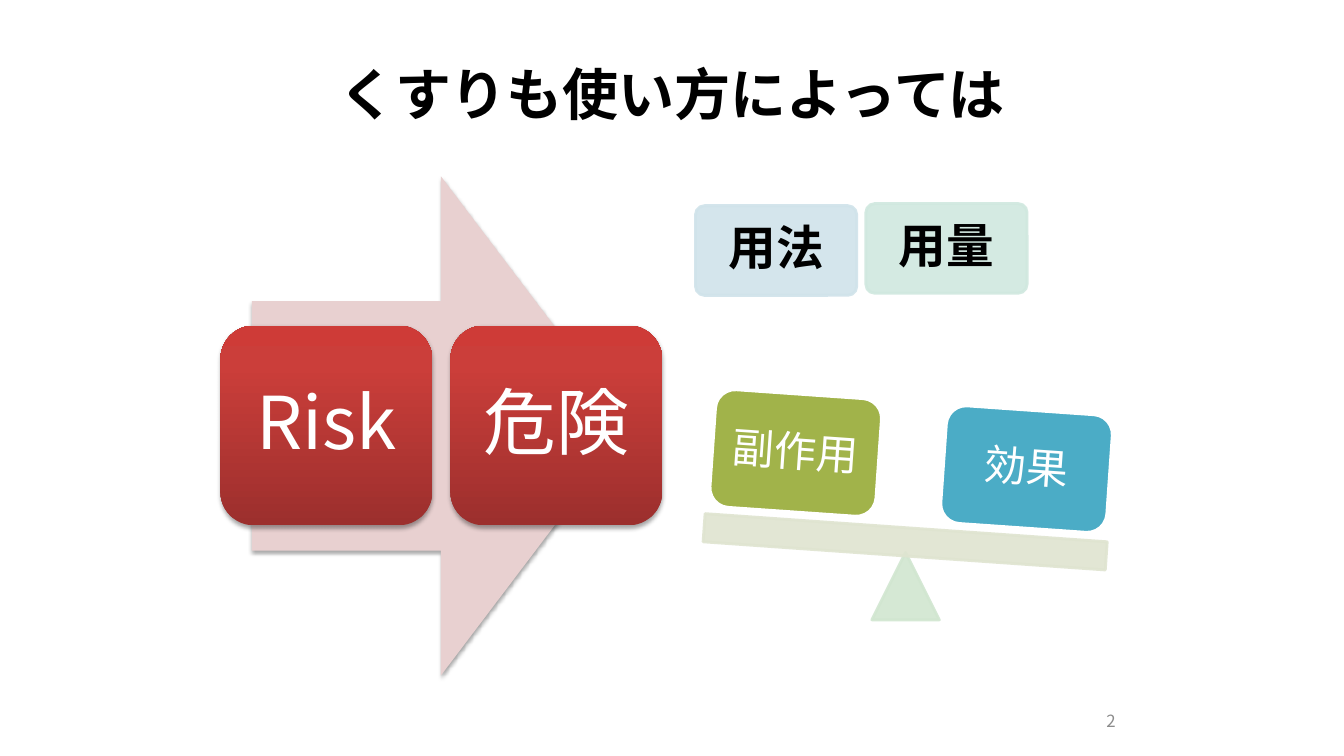
import pptx
import pptx.dml.color
import pptx.enum.shapes
import pptx.enum.text
import pptx.oxml
import pptx.oxml.ns
import pptx.util

Pt = pptx.util.Pt
SHAPE = pptx.enum.shapes.MSO_SHAPE
ALIGN = pptx.enum.text.PP_ALIGN
qn = pptx.oxml.ns.qn
FONT = "Noto Sans CJK JP"
TILT = 4
COLORS = {
    "text": "000000", "light": "FFFFFF", "number": "8C8C8C",
    "arrow": "E8D0D0", "usage": "D0E3EA", "dose": "D0E8DF",
    "pivot": "D1E6D0", "beam": "DFE4D0",
    "side_effect": "A1B34A", "benefit": "4BACC6",
}
RISK_GRADIENT = [(0, "9C2F2D"), (80, "CB3E3A"), (100, "CE3B37")]


def rgb(name):
    return pptx.dml.color.RGBColor.from_string(COLORS[name])


def add_xml(parent, tag, inner="", **attributes):
    listed = " ".join(f'{key}="{value}"' for key, value in attributes.items())
    namespace = pptx.oxml.ns.nsdecls("a")
    parent.append(pptx.oxml.parse_xml(f"<a:{tag} {namespace} {listed}>{inner}</a:{tag}>"))


def write(shape, text, size, color, bold=False, align=ALIGN.CENTER, inset=9, spacing=0.9):
    frame = shape.text_frame
    frame_format = {
        "word_wrap": True,
        "vertical_anchor": pptx.enum.text.MSO_ANCHOR.MIDDLE,
        "margin_left": Pt(inset), "margin_right": Pt(inset),
        "margin_top": Pt(inset / 2), "margin_bottom": Pt(inset / 2),
    }
    for key, value in frame_format.items():
        setattr(frame, key, value)
    paragraph = frame.paragraphs[0]
    paragraph.alignment = align
    paragraph.line_spacing = spacing
    run = paragraph.add_run()
    run.text = text
    for key, value in {"size": Pt(size), "bold": bold, "name": FONT}.items():
        setattr(run.font, key, value)
    run.font.color.rgb = rgb(color)
    add_xml(run.font._element, "ea", typeface=FONT)


def add_label(slide, box, text, size, color, **options):
    label = slide.shapes.add_textbox(*map(Pt, box))
    write(label, text, size, color, inset=7.2, spacing=1.0, **options)


def add_block(slide, kind, box, fill, line=None, alpha=None, rotation=0, corner=None):
    block = slide.shapes.add_shape(kind, *map(Pt, box))
    block.rotation = rotation
    if corner is not None:
        block.adjustments[0] = corner
    block.fill.solid()
    block.fill.fore_color.rgb = rgb(fill)
    if line:
        block.line.color.rgb = rgb(line)
        block.line.width = Pt(2)
    else:
        block.line.fill.background()
    block.shadow.inherit = False
    if alpha:
        for color in block._element.spPr.iter(qn("a:srgbClr")):
            add_xml(color, "alpha", val=alpha * 1000)
    return block


def add_soft_shadow(block):
    effects = block._element.spPr.find(qn("a:effectLst"))
    add_xml(effects, "outerShdw", '<a:srgbClr val="000000"><a:alpha val="35000"/></a:srgbClr>',
            blurRad=Pt(3.1), dist=Pt(1.8), dir=5400000, rotWithShape=0)


def add_risk_card(slide, left, text):
    card = add_block(slide, SHAPE.ROUNDED_RECTANGLE, (left, 232.6, 151.2, 142.6), "light")
    card.fill.gradient()
    gradient = card._element.spPr.find(qn("a:gradFill"))
    for child in list(gradient):
        gradient.remove(child)
    stops = "".join(f'<a:gs pos="{position * 1000}"><a:srgbClr val="{color}"/></a:gs>'
                    for position, color in RISK_GRADIENT)
    add_xml(gradient, "gsLst", stops)
    add_xml(gradient, "lin", ang=16200000, scaled=0)
    add_soft_shadow(card)
    write(card, text, 52, "light", inset=16)


def main():
    deck = pptx.Presentation()
    deck.slide_width, deck.slide_height = Pt(960), Pt(540)
    slide = deck.slides.add_slide(deck.slide_layouts[6])

    # Title and page number
    add_label(slide, (156, 21.6, 648, 90), "くすりも使い方によっては", 40, "text", bold=True)
    add_label(slide, (636, 500.5, 168, 28.8), "2", 12, "number", align=ALIGN.RIGHT)

    # Risk arrow with its two cards
    risk_arrow = add_block(slide, SHAPE.RIGHT_ARROW, (180, 126, 270, 356.4), "arrow")
    add_soft_shadow(risk_arrow)
    for left, text in ((157.5, "Risk"), (321.8, "危険")):
        add_risk_card(slide, left, text)

    # Usage and dose above the scale
    for left, top, text, fill in ((496.8, 146.9, "用法", "usage"), (618.5, 145.4, "用量", "dose")):
        heading = add_block(slide, SHAPE.ROUNDED_RECTANGLE, (left, top, 115.2, 64.1),
                            fill, line=fill, alpha=90, corner=0.1)
        write(heading, text, 34, "text", bold=True)

    # Tilted scale
    add_block(slide, SHAPE.ISOSCELES_TRIANGLE, (622.8, 394.6, 48.2, 48.2),
              "pivot", line="pivot", alpha=90)
    add_block(slide, SHAPE.RECTANGLE, (502.6, 376.9, 288, 20.2),
              "beam", line="beam", alpha=90, rotation=TILT)
    for left, top, text, fill in ((673.9, 293, "効果", "benefit"),
                                  (509, 281.5, "副作用", "side_effect")):
        weight = add_block(slide, SHAPE.ROUNDED_RECTANGLE, (left, top, 118.8, 84.2),
                           fill, line="light", rotation=TILT)
        write(weight, text, 30, "light")

    deck.save("out.pptx")


if __name__ == "__main__":
    main()
